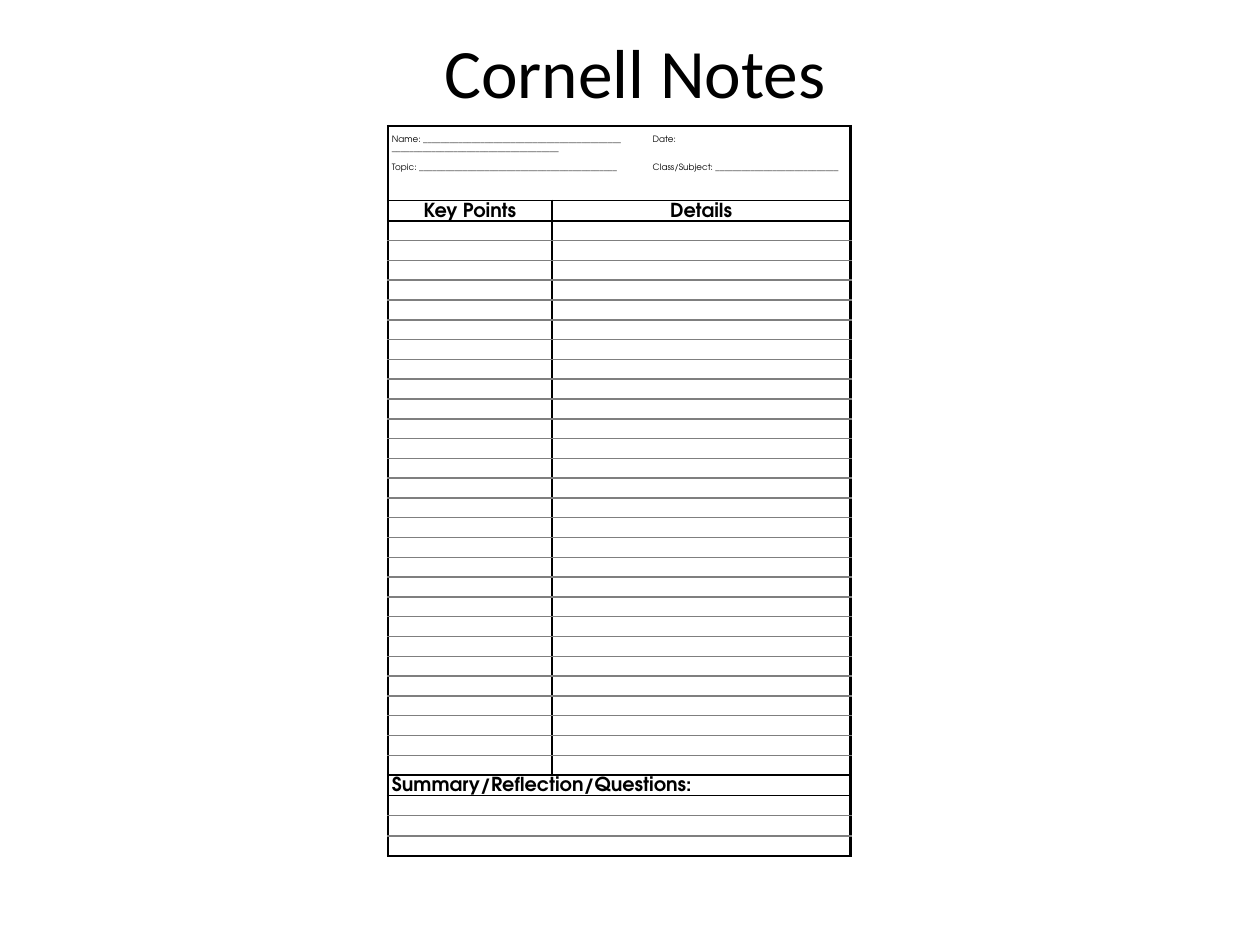
"""Build a slide with a blank Cornell Notes form."""
from dataclasses import dataclass

from lxml.etree import SubElement
from pptx import Presentation
from pptx.dml.color import RGBColor
from pptx.enum.text import MSO_ANCHOR, PP_ALIGN
from pptx.oxml.ns import qn
from pptx.util import Inches, Pt


@dataclass(frozen=True)
class Theme:
    ink: str = "000000"
    rule: str = "7F7F7F"
    head: str = "Calibri"
    body: str = "TeX Gyre Adventor"
    title: float = 39.6
    label: float = 11
    small: float = 5
    thick: float = 1.5
    thin: float = 1


theme = Theme()


def write(frame, text, size=theme.small, font=theme.body, bold=False,
          align=PP_ALIGN.LEFT, space=None, gap=0, tab=None):
    for i, line in enumerate(text.split("\n")):
        para = frame.paragraphs[0] if i == 0 else frame.add_paragraph()
        para.alignment = align
        if space:
            para.line_spacing = space
        if i > 1:
            para.space_before = Pt(gap)
        if tab:
            stops = SubElement(para._p.get_or_add_pPr(), qn("a:tabLst"))
            SubElement(stops, qn("a:tab"), pos=str(Inches(tab)), algn="l")
        if not line:
            end = SubElement(para._p, qn("a:endParaRPr"), sz=str(int(size * 100)))
            SubElement(end, qn("a:latin"), typeface=font)
            continue
        run = para.add_run()
        run.text = line
        run.font.size = Pt(size)
        run.font.name = font
        run.font.bold = bold
        run.font.color.rgb = RGBColor.from_string(theme.ink)


def border(cell, side, color, width):
    line = SubElement(cell._tc.get_or_add_tcPr(), qn("a:ln" + side), w=str(Pt(width)))
    fill = SubElement(line, qn("a:solidFill"))
    SubElement(fill, qn("a:srgbClr"), val=color)


deck = Presentation()
deck.slide_width, deck.slide_height = Inches(10), Inches(7.5)
slide = deck.slides.add_slide(deck.slide_layouts[5])

title = slide.shapes.title
title.left, title.top = Inches(0.58), Inches(0.3)
title.width, title.height = Inches(8.92), Inches(0.53)
title.text_frame.vertical_anchor = MSO_ANCHOR.MIDDLE
write(title.text_frame, "Cornell Notes", size=theme.title, font=theme.head,
      align=PP_ALIGN.CENTER)

lines, ends = 28, 3
labels = 1
notes = labels + 1
total = notes + lines
last = total + 1 + ends
heights = [0.59, 0.16] + [4.4 / lines] * lines + [0.16] + [0.16] * ends

form = slide.shapes.add_table(last, 2, Inches(3.08), Inches(1),
                              Inches(3.67), Inches(sum(heights))).table
form.first_row = form.horz_banding = False
for col, width in zip(form.columns, (1.3, 2.37)):
    col.width = Inches(width)
for row, height in zip(form.rows, heights):
    row.height = Inches(height)

texts = {
    (0, 0): ("Name: " + "_" * 45 + "\tDate:\n" + "_" * 38 + "\n"
             + "Topic: " + "_" * 45 + "\tClass/Subject: " + "_" * 28,
             dict(space=1.15, gap=5.5, tab=2.07)),
    (labels, 0): ("Key Points", dict(size=theme.label, bold=True, space=1.15,
                                     align=PP_ALIGN.CENTER)),
    (labels, 1): ("Details", dict(size=theme.label, bold=True, space=1.15,
                                  align=PP_ALIGN.CENTER)),
    (total, 0): ("Summary/Reflection/Questions:",
                 dict(size=theme.label, bold=True, space=1.15)),
}
edges = {y: (theme.ink, theme.thick) for y in (0, notes, total, last)}
edges |= {y: (theme.ink, theme.thin) for y in (labels, total + 1)}
plain = (theme.rule, theme.thin)

for y in range(last):
    if y == 0 or y >= total:
        form.cell(y, 0).merge(form.cell(y, 1))
    for x in range(2):
        cell = form.cell(y, x)
        cell.margin_left = cell.margin_right = Inches(0.03)
        cell.margin_top = Inches(0.07 if y == 0 else 0)
        cell.margin_bottom = 0
        for side in "LR":
            border(cell, side, theme.ink, theme.thick)
        border(cell, "T", *edges.get(y, plain))
        border(cell, "B", *edges.get(y + 1, plain))
        cell.fill.background()
        text, style = texts.get((y, x), ("", {}))
        write(cell.text_frame, text, **style)

deck.save("out.pptx")
